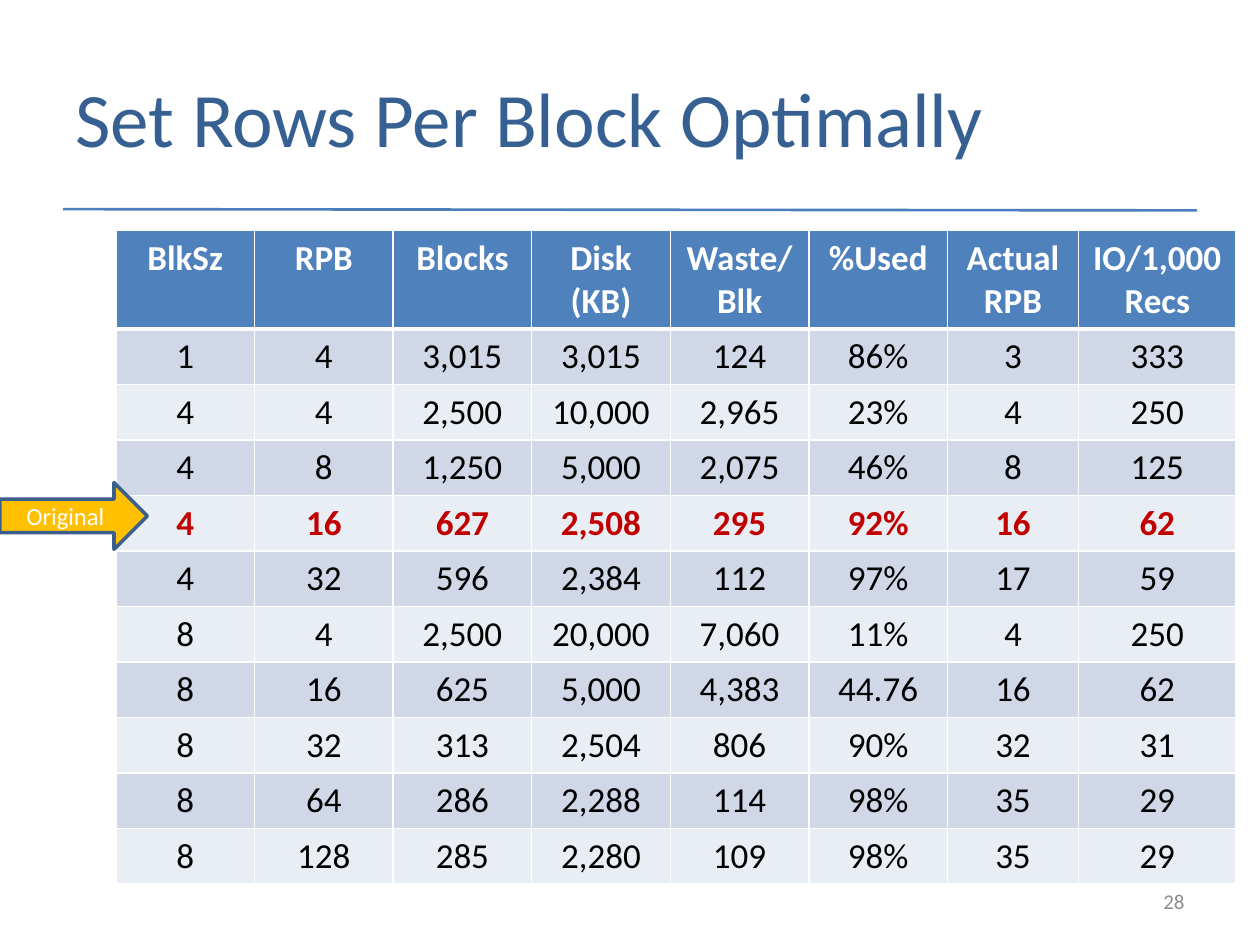
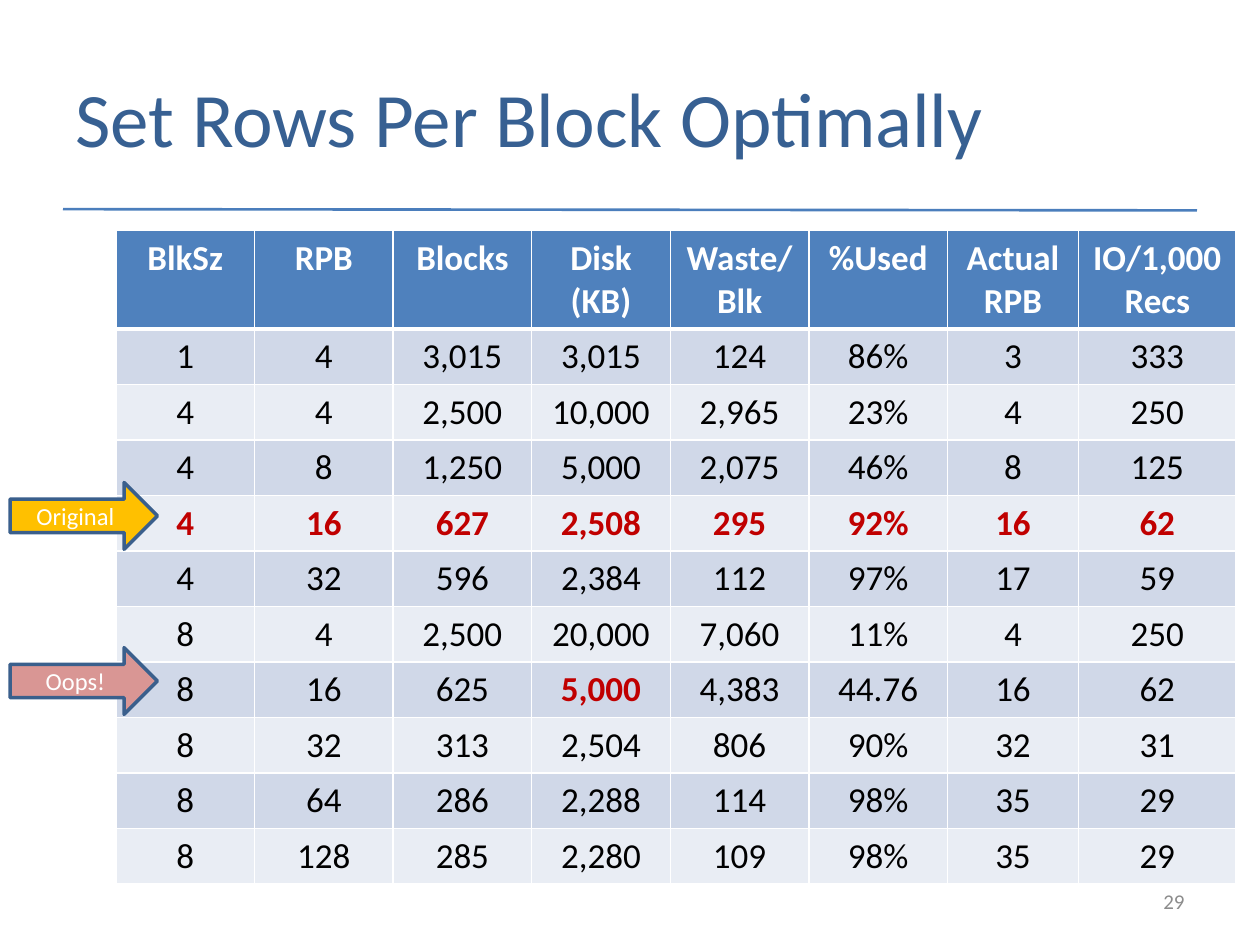
from lxml import etree
from pptx import Presentation
from pptx import util as u
from pptx.dml.color import RGBColor
from pptx.enum import shapes, text
from pptx.oxml import ns

# Theme: colours, font, type sizes in points
THEME = {
    "font": "Calibri",
    "title": "376092", "rule": "4B7EBC", "number": "8C8C8C",
    "header": "4F81BD", "bands": ("D0D8E8", "E9EDF4"),
    "white": "FFFFFF", "body": "000000", "highlight": "C00000",
    "outline": "3A5F8C", "baseline": "FFC000", "mistake": "D99694",
    "title_size": 44, "table_size": 20, "marker_size": 14, "number_size": 12,
}

HEADINGS = ["BlkSz", "RPB", "Blocks", "Disk (KB)", "Waste/\nBlk", "%Used", "Actual RPB", "IO/1,000 Recs"]
MEASUREMENTS = [
    ["1", "4", "3,015", "3,015", "124", "86%", "3", "333"],
    ["4", "4", "2,500", "10,000", "2,965", "23%", "4", "250"],
    ["4", "8", "1,250", "5,000", "2,075", "46%", "8", "125"],
    ["4", "16", "627", "2,508", "295", "92%", "16", "62"],
    ["4", "32", "596", "2,384", "112", "97%", "17", "59"],
    ["8", "4", "2,500", "20,000", "7,060", "11%", "4", "250"],
    ["8", "16", "625", "5,000", "4,383", "44.76", "16", "62"],
    ["8", "32", "313", "2,504", "806", "90%", "32", "31"],
    ["8", "64", "286", "2,288", "114", "98%", "35", "29"],
    ["8", "128", "285", "2,280", "109", "98%", "35", "29"],
]
COLUMN_WIDTHS = [1.1] * 6 + [1.04, 1.25]
ROW_HEIGHT = 0.41
BASELINE_CELLS = {(4, column) for column in range(len(HEADINGS))}

# What differs: page number, highlighted (row, column) cells,
# markers as (label, colour, left, top)
PAGES = [
    ("28", BASELINE_CELLS, [("Original", "baseline", 0, 3.83)]),
    ("29", BASELINE_CELLS | {(7, 3)},
     [("Original", "baseline", 0.08, 3.83), ("Oops!", "mistake", 0.08, 5.14)]),
]


def write(frame, content, size, color, align, bold=False):
    """Fill the first paragraph, one run per line."""
    paragraph = frame.paragraphs[0]
    paragraph.alignment = align
    for index, line in enumerate(content.split("\n")):
        if index:
            paragraph.add_line_break()
        run = paragraph.add_run()
        run.text = line
        run.font.name = THEME["font"]
        run.font.size = u.Pt(THEME[size])
        run.font.bold = bold
        run.font.color.rgb = RGBColor.from_string(THEME[color])


def set_borders(cell, top, bottom):
    """Draw white borders; they must come before the cell's fill."""
    properties = cell._tc.get_or_add_tcPr()
    widths = {"lnL": 1, "lnR": 1, "lnT": top, "lnB": bottom}
    for position, (side, width) in enumerate(widths.items()):
        line = etree.Element(ns.qn(f"a:{side}"), w=str(u.Pt(width)))
        fill = etree.SubElement(line, ns.qn("a:solidFill"))
        etree.SubElement(fill, ns.qn("a:srgbClr"), val=THEME["white"])
        properties.insert(position, line)


prs = Presentation()
prs.slide_width, prs.slide_height = u.Inches(10), u.Inches(7.5)
title_only = prs.slide_layouts[5]

for number, highlighted, markers in PAGES:
    slide = prs.slides.add_slide(title_only)

    # Rule under the title
    rule = slide.shapes.add_connector(
        shapes.MSO_CONNECTOR.STRAIGHT, u.Inches(0.5), u.Inches(1.66), u.Inches(9.5), u.Inches(1.67))
    rule.line.color.rgb = RGBColor.from_string(THEME["rule"])
    rule.line.width = u.Pt(1.5)
    etree.SubElement(rule._element.spPr, ns.qn("a:effectLst"))

    # Title
    title = slide.shapes.title
    title.left, title.top = u.Inches(0.5), u.Inches(0.3)
    title.width, title.height = u.Inches(7.83), u.Inches(1.25)
    title.text_frame.vertical_anchor = text.MSO_ANCHOR.MIDDLE
    write(title.text_frame, "Set Rows Per Block Optimally", "title_size", "title", text.PP_ALIGN.LEFT)

    # Block size table
    rows = [HEADINGS] + MEASUREMENTS
    table_frame = slide.shapes.add_table(
        len(rows), len(HEADINGS), u.Inches(0.92), u.Inches(1.83),
        u.Inches(sum(COLUMN_WIDTHS)), u.Inches(ROW_HEIGHT * len(rows)))
    table = table_frame.table
    for column, width in zip(table.columns, COLUMN_WIDTHS):
        column.width = u.Inches(width)
    for r, values in enumerate(rows):
        table.rows[r].height = u.Inches(ROW_HEIGHT)
        for c, value in enumerate(values):
            cell = table.cell(r, c)
            marked = (r, c) in highlighted
            fill = THEME["bands"][(r - 1) % 2] if r else THEME["header"]
            color = "highlight" if marked else "body" if r else "white"
            cell.fill.solid()
            cell.fill.fore_color.rgb = RGBColor.from_string(fill)
            set_borders(cell, top=3 if r == 1 else 1, bottom=3 if r == 0 else 1)
            write(cell.text_frame, value, "table_size", color, text.PP_ALIGN.CENTER, bold=marked or r == 0)
    table_frame.height = u.Inches(5.1)

    # Row markers
    for label, color, left, top in markers:
        marker = slide.shapes.add_shape(
            shapes.MSO_SHAPE.RIGHT_ARROW, u.Inches(left), u.Inches(top), u.Inches(1.17), u.Inches(0.53))
        marker.shadow.inherit = False
        marker.fill.solid()
        marker.fill.fore_color.rgb = RGBColor.from_string(THEME[color])
        marker.line.color.rgb = RGBColor.from_string(THEME["outline"])
        marker.line.width = u.Pt(2)
        marker.text_frame.vertical_anchor = text.MSO_ANCHOR.MIDDLE
        write(marker.text_frame, label, "marker_size", "white", text.PP_ALIGN.CENTER)

    # Page number
    page_number = slide.shapes.add_textbox(u.Inches(9), u.Inches(6.95), u.Inches(0.5), u.Inches(0.4))
    page_number.text_frame.word_wrap = True
    page_number.text_frame.vertical_anchor = text.MSO_ANCHOR.MIDDLE
    write(page_number.text_frame, number, "number_size", "number", text.PP_ALIGN.RIGHT)

prs.save("out.pptx")
